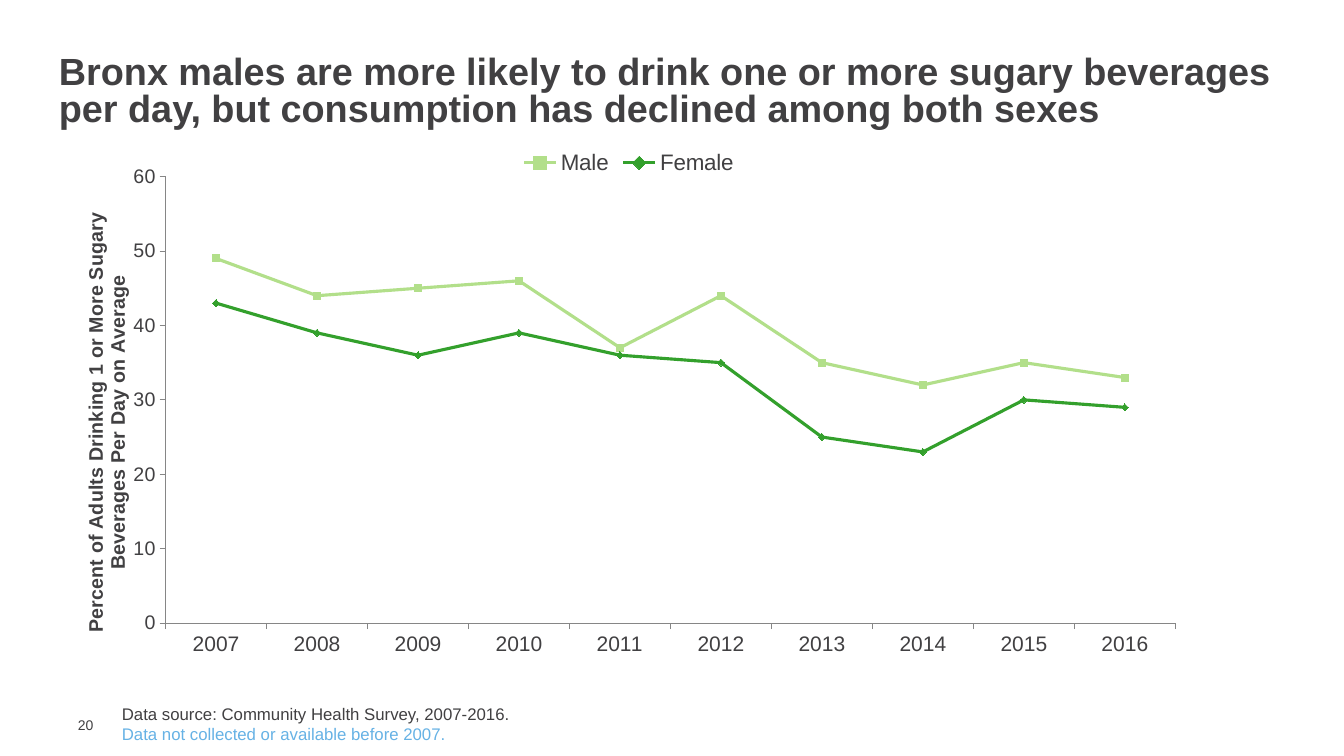
import pptx
import pptx.chart.data
import pptx.dml.color
import pptx.enum.chart
import pptx.enum.text
import pptx.oxml
import pptx.oxml.ns
import pptx.util
from dataclasses import dataclass

HEADLINE = ("Bronx males are more likely to drink one or more sugary beverages "
            "per day, but consumption has declined among both sexes")
PAGE = "20"
SOURCE = "Data source: Community Health Survey, 2007-2016."
CAVEAT = "Data not collected or available before 2007."
AXIS_TITLE = "Percent of Adults Drinking 1 or More Sugary Beverages Per Day on Average"
YEARS = [str(year) for year in range(2007, 2017)]
SEXES = [
    ("Male", [49, 44, 45, 46, 37, 44, 35, 32, 35, 33], "B2DF8A", "SQUARE"),
    ("Female", [43, 39, 36, 39, 36, 35, 25, 23, 30, 29], "33A02C", "DIAMOND"),
]
BOXES = {
    "headline": (49, 33, 1257, 120),
    "page": (68, 716, 43, 17),
    "source": (112, 699, 979, 50),
    "trend": (68, 139, 1122, 538),
}
PLOT = {"x": 0.087, "y": 0.07, "w": 0.9, "h": 0.83}
AXIS_TITLE_SPOT = {"x": 0.01, "y": 0.13}


@dataclass(frozen=True)
class Theme:
    face: str = "Arial"
    ink: str = "414042"
    note: str = "66B2E5"
    axis: str = "868686"
    headline: int = 27
    legend: int = 16
    years: int = 15
    values: int = 14
    source: int = 12
    page: int = 10
    line: float = 2.25
    marker: int = 5


THEME = Theme()
PX = 914400 / 100.8


def px(length):
    return round(length * PX)


def rgb(code):
    return pptx.dml.color.RGBColor.from_string(code)


def style(font, size, color=THEME.ink, bold=False):
    font.name = THEME.face
    font.size = pptx.util.Pt(size)
    font.bold = bold
    font.color.rgb = rgb(color)


def add_text(slide, box, lines, size, bold=False, middle=False, spacing=None):
    frame = slide.shapes.add_textbox(*map(px, BOXES[box])).text_frame
    frame.word_wrap = True
    if middle:
        frame.vertical_anchor = pptx.enum.text.MSO_ANCHOR.MIDDLE
    for index, (words, color) in enumerate(lines):
        paragraph = frame.add_paragraph() if index else frame.paragraphs[0]
        paragraph.text = words
        paragraph.line_spacing = spacing
        style(paragraph.font, size, color, bold)
    return frame


def manual_layout(spot, inner=False):
    target = '<c:layoutTarget val="inner"/>' if inner else ""
    modes = "".join(f'<c:{key}Mode val="edge"/>' for key in ("x", "y"))
    values = "".join(f'<c:{key} val="{value}"/>' for key, value in spot.items())
    return pptx.oxml.parse_xml(
        f'<c:layout {pptx.oxml.ns.nsdecls("c")}><c:manualLayout>'
        f"{target}{modes}{values}</c:manualLayout></c:layout>")


def place(parent, layout, index):
    for old in parent.findall(pptx.oxml.ns.qn("c:layout")):
        parent.remove(old)
    parent.insert(index, layout)


def style_axis(axis, size):
    axis.has_major_gridlines = False
    axis.major_tick_mark = pptx.enum.chart.XL_TICK_MARK.OUTSIDE
    axis.minor_tick_mark = pptx.enum.chart.XL_TICK_MARK.NONE
    axis.format.line.color.rgb = rgb(THEME.axis)
    axis.format.line.width = pptx.util.Pt(0.75)
    style(axis.tick_labels.font, size)


def add_trend(slide):
    consumption = pptx.chart.data.CategoryChartData(number_format="0")
    consumption.categories = YEARS
    for name, percents, _, _ in SEXES:
        consumption.add_series(name, percents)
    trend = slide.shapes.add_chart(
        pptx.enum.chart.XL_CHART_TYPE.LINE_MARKERS,
        *map(px, BOXES["trend"]), consumption).chart
    style(trend.font, 18)
    trend.has_title = False
    trend.has_legend = True
    trend.legend.position = pptx.enum.chart.XL_LEGEND_POSITION.TOP
    trend.legend.include_in_layout = False
    style(trend.legend.font, THEME.legend)

    style_axis(trend.category_axis, THEME.years)
    percent_axis = trend.value_axis
    style_axis(percent_axis, THEME.values)
    percent_axis.minimum_scale = 0
    percent_axis.maximum_scale = 60
    percent_axis.major_unit = 10
    title = percent_axis.axis_title
    title.text_frame.text = AXIS_TITLE
    style(title.text_frame.paragraphs[0].font, THEME.values, bold=True)
    title_xml = title.text_frame._txBody.getparent().getparent()
    place(title_xml, manual_layout(AXIS_TITLE_SPOT), 1)
    plot_area = trend._chartSpace.chart.plotArea
    place(plot_area, manual_layout(PLOT, inner=True), 0)

    trend.plots[0].vary_by_categories = False
    for sex, (_, _, color, marker) in zip(trend.plots[0].series, SEXES):
        sex.smooth = False
        sex.format.line.color.rgb = rgb(color)
        sex.format.line.width = pptx.util.Pt(THEME.line)
        sex.marker.style = pptx.enum.chart.XL_MARKER_STYLE[marker]
        sex.marker.size = THEME.marker
        sex.marker.format.fill.solid()
        sex.marker.format.fill.fore_color.rgb = rgb(color)
        sex.marker.format.line.color.rgb = rgb(color)


def main():
    deck = pptx.Presentation()
    deck.slide_width = px(1344)
    deck.slide_height = px(756)
    slide = deck.slides.add_slide(deck.slide_layouts[6])
    page = add_text(slide, "page", [(PAGE, THEME.ink)], THEME.page, middle=True)
    page.margin_top = page.margin_right = page.margin_bottom = 0
    add_text(slide, "headline", [(HEADLINE, THEME.ink)], THEME.headline,
             bold=True, middle=True, spacing=0.8)
    add_text(slide, "source", [(SOURCE, THEME.ink), (CAVEAT, THEME.note)],
             THEME.source)
    add_trend(slide)
    deck.save("out.pptx")


if __name__ == "__main__":
    main()
